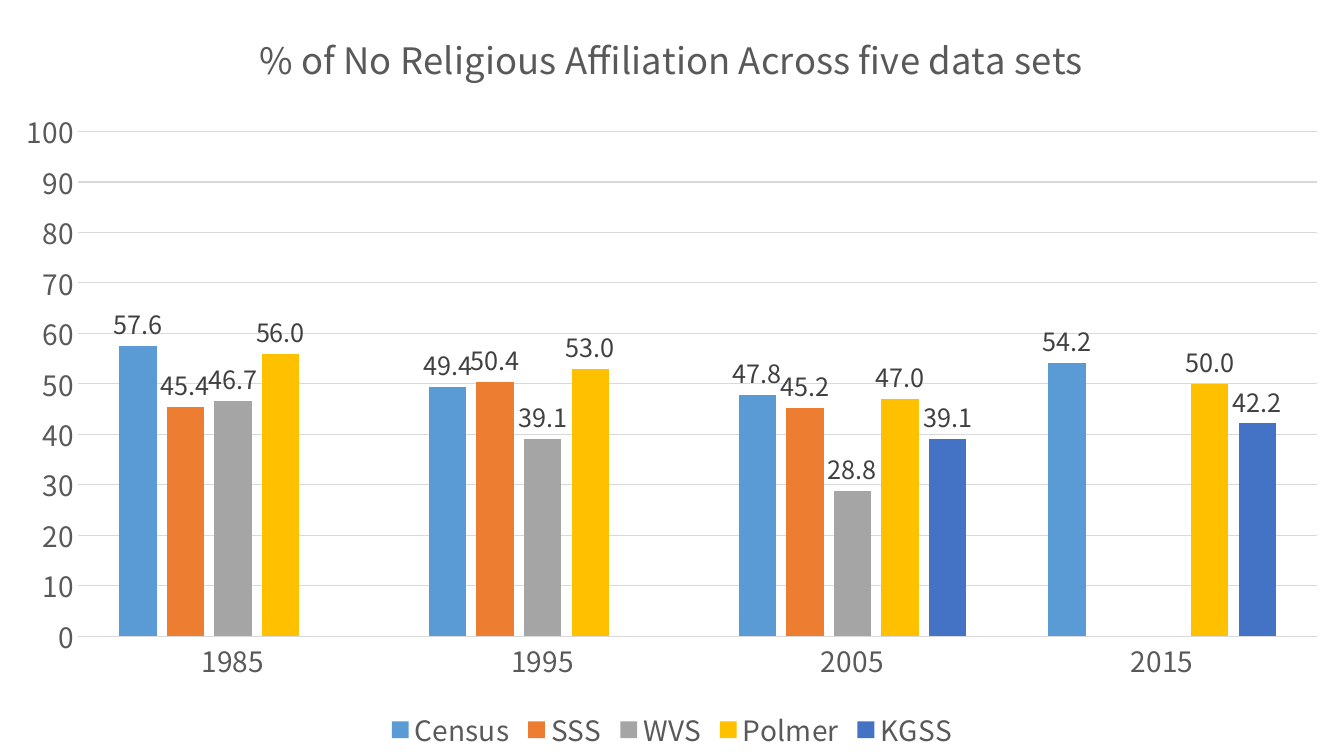
import pptx
import pptx.util
import pptx.chart.data
import pptx.dml.color
import pptx.enum.chart
from dataclasses import dataclass

Inches = pptx.util.Inches
enums = pptx.enum.chart


@dataclass(frozen=True)
class Theme:
    font: str = "Noto Sans CJK KR"
    text: str = "595959"
    label: str = "404040"
    grid: str = "D9D9D9"
    rule: float = 0.75
    title: int = 26
    axis: int = 20
    value: int = 18


theme = Theme()
TITLE = "% of No Religious Affiliation Across five data sets"
YEARS = ["1985", "1995", "2005", "2015"]
SERIES = [
    ("Census", "5B9BD5", (57.6, 49.4, 47.8, 54.2)),
    ("SSS", "ED7D31", (45.4, 50.4, 45.2, None)),
    ("WVS", "A5A5A5", (46.7, 39.1, 28.8, None)),
    ("Polmer", "FFC000", (56, 53, 47, 50)),
    ("KGSS", "4472C4", (None, None, 39.1, 42.2)),
]


def apply(item, values):
    for name, value in values.items():
        setattr(item, name, value)


def rgb(color):
    return pptx.dml.color.RGBColor.from_string(color)


def style(font, size, color):
    apply(font, {"name": theme.font, "size": pptx.util.Pt(size), "bold": False})
    font.color.rgb = rgb(color)


def stroke(line):
    line.color.rgb = rgb(theme.grid)
    line.width = pptx.util.Pt(theme.rule)


def add_title(chart):
    chart.has_title = True
    frame = chart.chart_title.text_frame
    frame.text = TITLE
    style(frame.paragraphs[0].runs[0].font, theme.title, theme.text)
    chart.chart_title.include_in_layout = False


def set_axes(chart):
    for axis in (chart.category_axis, chart.value_axis):
        apply(axis, {
            "major_tick_mark": enums.XL_TICK_MARK.NONE,
            "minor_tick_mark": enums.XL_TICK_MARK.NONE,
        })
        style(axis.tick_labels.font, theme.axis, theme.text)
    stroke(chart.category_axis.format.line)
    scale = chart.value_axis
    apply(scale, {
        "minimum_scale": 0,
        "maximum_scale": 100,
        "major_unit": 10,
        "has_major_gridlines": True,
    })
    apply(scale.tick_labels, {"number_format": "0", "number_format_is_linked": False})
    scale.format.line.fill.background()
    stroke(scale.major_gridlines.format.line)


def set_bars(plot):
    apply(plot, {"gap_width": 219, "overlap": -27, "vary_by_categories": False})
    for bars, (_, color, _) in zip(plot.series, SERIES):
        bars.invert_if_negative = False
        bars.format.fill.solid()
        bars.format.fill.fore_color.rgb = rgb(color)
        apply(bars.data_labels, {
            "show_value": True,
            "number_format": "0.0",
            "number_format_is_linked": False,
            "position": enums.XL_LABEL_POSITION.OUTSIDE_END,
        })
        style(bars.data_labels.font, theme.value, theme.label)


def add_legend(chart):
    chart.has_legend = True
    apply(chart.legend, {
        "position": enums.XL_LEGEND_POSITION.BOTTOM,
        "include_in_layout": False,
    })
    style(chart.legend.font, theme.axis, theme.text)


def add_chart(slide, left, top, width, height):
    data = pptx.chart.data.CategoryChartData(number_format="0.0")
    data.categories = YEARS
    for name, _, values in SERIES:
        data.add_series(name, values)
    chart = slide.shapes.add_chart(
        enums.XL_CHART_TYPE.COLUMN_CLUSTERED, left, top, width, height, data
    ).chart
    chart.font.name = theme.font
    add_title(chart)
    set_axes(chart)
    set_bars(chart.plots[0])
    add_legend(chart)


def main():
    deck = pptx.Presentation()
    apply(deck, {"slide_width": Inches(13.33), "slide_height": Inches(7.5)})
    slide = deck.slides.add_slide(deck.slide_layouts[6])
    add_chart(slide, Inches(0), Inches(0), deck.slide_width, deck.slide_height)
    deck.save("out.pptx")


if __name__ == "__main__":
    main()
